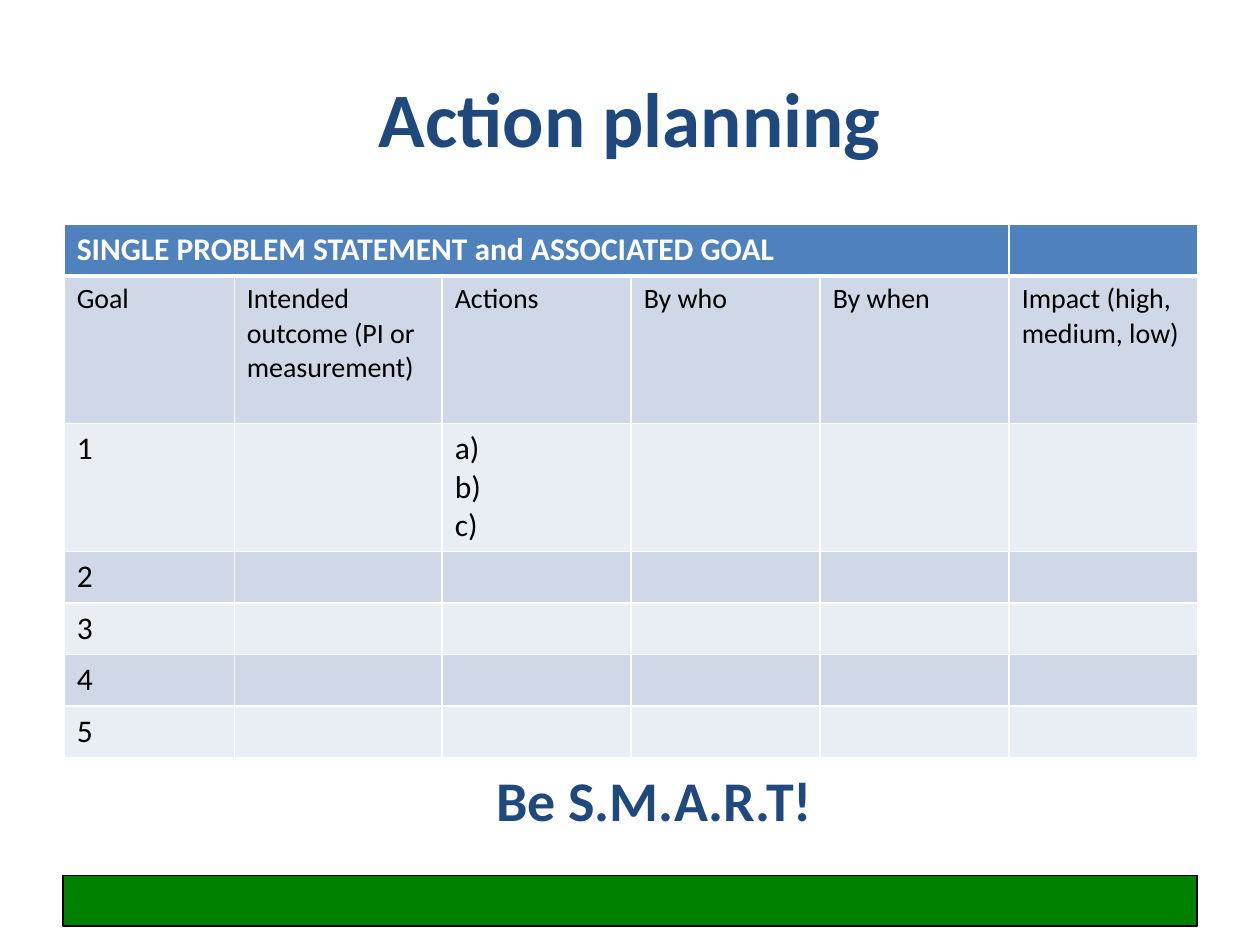
from dataclasses import dataclass

from lxml import etree
from pptx import Presentation
from pptx import util as u
from pptx.dml.color import RGBColor
from pptx.enum import shapes, text
from pptx.oxml import ns


@dataclass(frozen=True)
class Theme:
    font: str = "Calibri"
    navy: str = "1F497D"
    blue: str = "4F81BD"
    bands: tuple = ("D0D8E8", "E9EDF4")
    green: str = "008000"
    white: str = "FFFFFF"
    black: str = "000000"
    title: int = 44
    motto: int = 32
    body: int = 18
    label: int = 16


THEME = Theme()
COLS = (1.35, 1.65, 1.5, 1.5, 1.5, 1.5)
ROWS = (0.41, 1.17, 1, 0.41, 0.41, 0.41, 0.41)
LABELS = ("Goal", "Intended outcome (PI or measurement)", "Actions",
          "By who", "By when", "Impact (high, medium, low)")
GOALS = 5
STEPS = ("a)", "b)", "c)")


def rgb(color):
    return RGBColor.from_string(color)


def place(shape, box):
    shape.left, shape.top, shape.width, shape.height = map(u.Inches, box)


def write(frame, lines, size, color, bold=False, align=None):
    for i, line in enumerate(lines):
        para = frame.add_paragraph() if i else frame.paragraphs[0]
        para.alignment = align
        run = para.add_run()
        run.text = line
        font = run.font
        font.name, font.size, font.bold = THEME.font, u.Pt(size), bold
        font.color.rgb = rgb(color)


def edge(cell, top, bottom):
    """Draw the white cell borders; widths are in points."""
    props = cell._tc.get_or_add_tcPr()
    widths = {"a:lnL": 1, "a:lnR": 1, "a:lnT": top, "a:lnB": bottom}
    for i, (tag, width) in enumerate(widths.items()):
        line = etree.Element(ns.qn(tag), w=str(u.Pt(width)))
        fill = etree.SubElement(line, ns.qn("a:solidFill"))
        etree.SubElement(fill, ns.qn("a:srgbClr"), val=THEME.white)
        props.insert(i, line)


def add_bar(slide, box):
    bar = slide.shapes.add_shape(shapes.MSO_SHAPE.RECTANGLE, *map(u.Inches, box))
    bar.shadow.inherit = False
    bar.fill.solid()
    bar.fill.fore_color.rgb = rgb(THEME.green)
    bar.line.color.rgb = rgb(THEME.black)
    bar.line.width = u.Pt(0.75)


def add_title(slide, box):
    title = slide.shapes.title
    place(title, box)
    title.text_frame.vertical_anchor = text.MSO_ANCHOR.MIDDLE
    write(title.text_frame, ["Action planning"], THEME.title, THEME.navy,
          True, text.PP_ALIGN.CENTER)


def add_plan(slide, box):
    frame = slide.shapes.add_table(len(ROWS), len(COLS), *map(u.Inches, box))
    table = frame.table
    for col, width in zip(table.columns, COLS):
        col.width = u.Inches(width)
    for row, height in zip(table.rows, ROWS):
        row.height = u.Inches(height)

    # Fills and borders
    for r in range(len(ROWS)):
        for c in range(len(COLS)):
            cell = table.cell(r, c)
            cell.fill.solid()
            color = THEME.bands[(r - 1) % 2] if r else THEME.blue
            cell.fill.fore_color.rgb = rgb(color)
            edge(cell, 3 if r == 1 else 1, 3 if r == 0 else 1)

    # Heading, column labels, goal numbers and action steps
    table.cell(0, 0).merge(table.cell(0, 4))
    write(table.cell(0, 0).text_frame,
          ["SINGLE PROBLEM STATEMENT and ASSOCIATED GOAL"],
          THEME.body, THEME.white, True)
    for c, label in enumerate(LABELS):
        write(table.cell(1, c).text_frame, [label], THEME.label, THEME.black)
    for goal in range(1, GOALS + 1):
        write(table.cell(goal + 1, 0).text_frame, [str(goal)],
              THEME.body, THEME.black)
    write(table.cell(2, 2).text_frame, STEPS, THEME.body, THEME.black)


def add_motto(slide, box):
    frame = slide.shapes.add_textbox(*map(u.Inches, box)).text_frame
    frame.word_wrap = True
    frame.auto_size = text.MSO_AUTO_SIZE.SHAPE_TO_FIT_TEXT
    write(frame, ["Be S.M.A.R.T!"], THEME.motto, THEME.navy,
          True, text.PP_ALIGN.CENTER)


def main():
    deck = Presentation()
    deck.slide_width, deck.slide_height = u.Inches(10), u.Inches(7.5)
    slide = deck.slides.add_slide(deck.slide_layouts[5])
    add_bar(slide, (0.5, 6.95, 9, 0.4))
    add_title(slide, (0.5, 0.3, 9, 1.25))
    add_plan(slide, (0.51, 1.78, sum(COLS), sum(ROWS)))
    add_motto(slide, (3.66, 6.03, 3.07, 0.64))
    deck.save("out.pptx")


if __name__ == "__main__":
    main()
